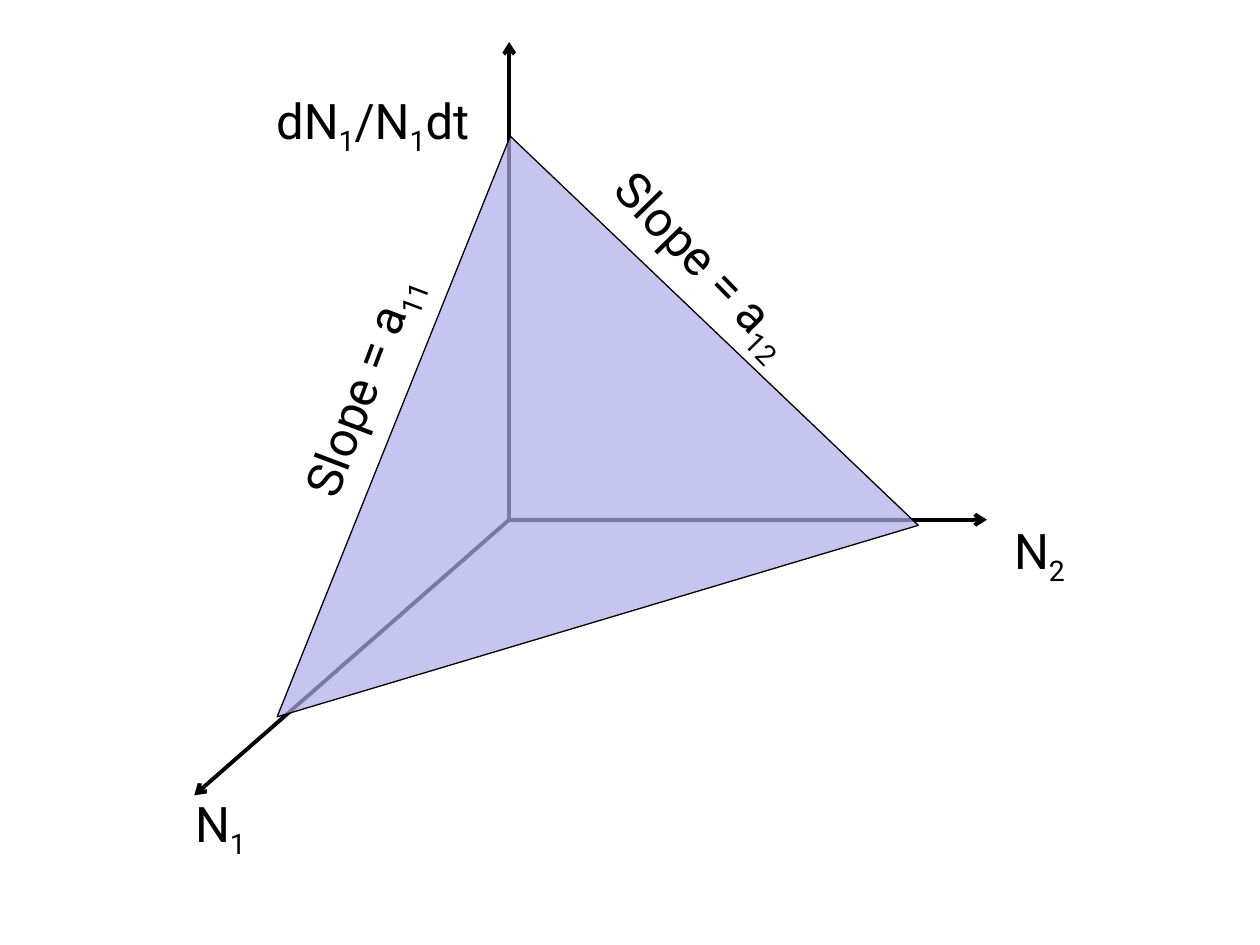
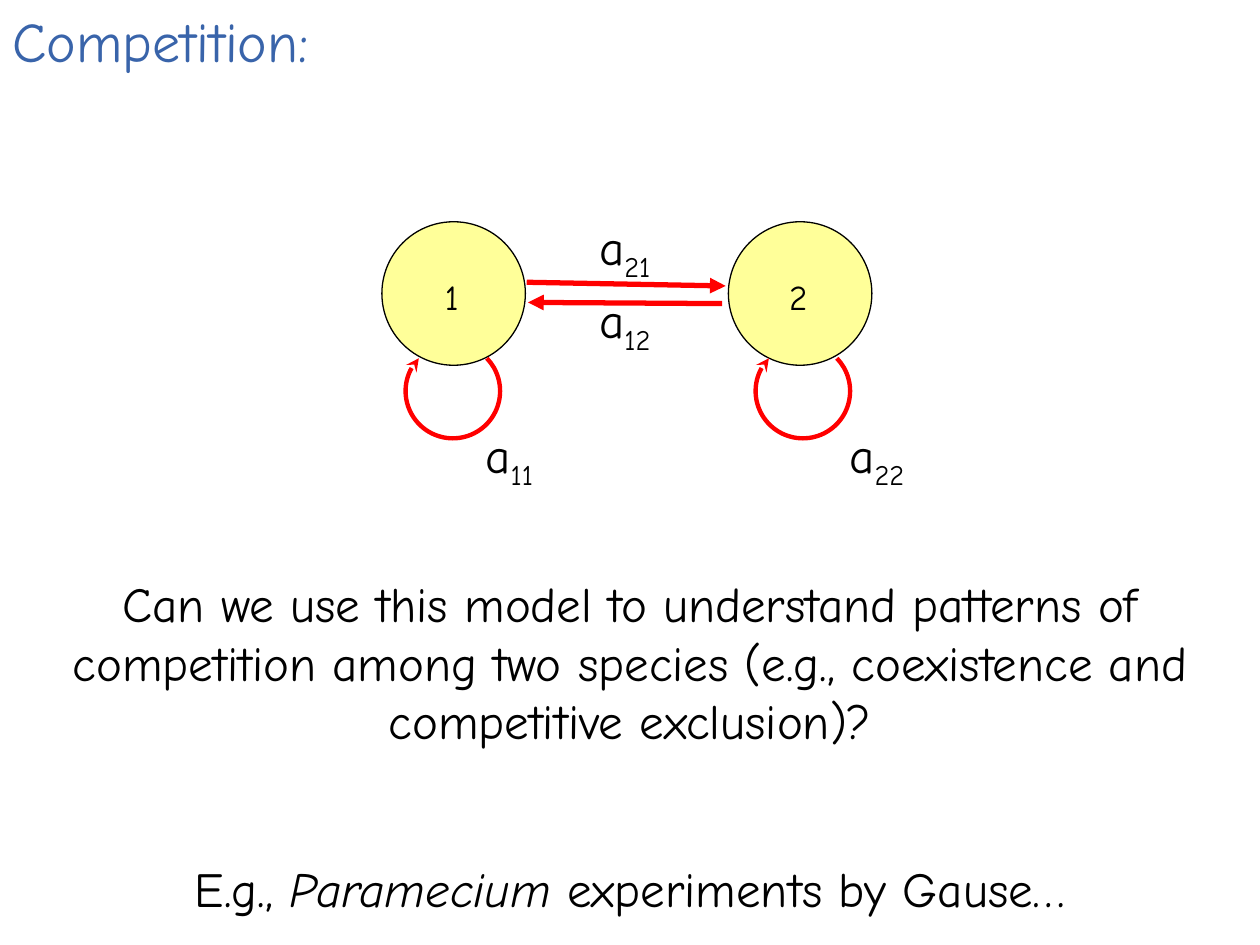
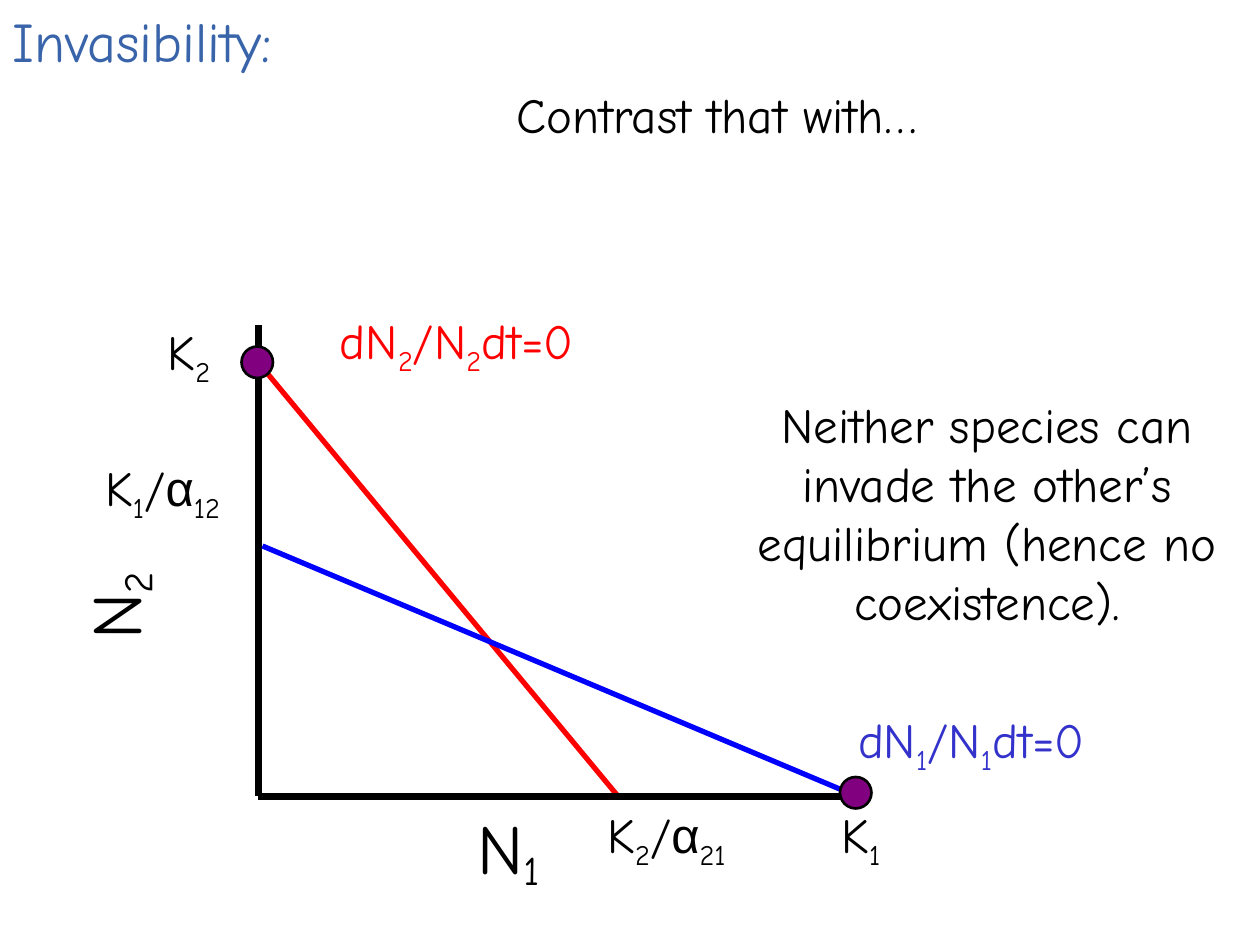
"""Build three slides on the competition model of two species."""
from itertools import groupby

from lxml.etree import SubElement
from pptx import Presentation
from pptx.dml.color import RGBColor
from pptx.enum.shapes import MSO_CONNECTOR, MSO_SHAPE
from pptx.enum.text import MSO_AUTO_SIZE, PP_ALIGN
from pptx.oxml.ns import qn
from pptx.util import Pt

HUES = {"black": "000000", "title": "3964AA", "plane": "ADADEB",
        "red": "FF0000", "blue": "0000FF", "label": "3333CC",
        "yellow": "FFFF99", "purple": "800080"}
HAND, SANS, GREEK = "Comic Neue", "Roboto", "Arial"
LEFT, MID = PP_ALIGN.LEFT, PP_ALIGN.CENTER
TITLE = {"size": 32, "hue": "title", "align": LEFT}
AXIS = {"size": 40, "align": LEFT, "sub": -16, "lead": 1.15}

# Text marks: |subscript|, *italic*, and a line break between paragraphs.
ORIGIN = (291, 297)
TIPS = [(111, 454.5), (291, 24), (564, 297)]
PLANE = [(158.4, 409.6), (291.6, 77.8), (524.8, 300.2)]
SPACE = [
    ("N|2|", (558, 294, 72, 41), {}),
    ("N|1|", (90, 450, 72, 41), {}),
    ("dN|1|/N|1|dt", (126, 48, 174, 41), {}),
    ("Slope = a|12|", (289.5, 129.5, 228, 41), {"turn": 45.7}),
    ("Slope = a|11|", (91.5, 199.5, 228, 41), {"turn": 290.7}),
]

NODES = [("1", 218.2, 231.8), ("2", 416.2, 431.8)]
LINKS = [((412.6, 173.5), (301.7, 172.8)), ((301, 161.3), (414.7, 163.4))]
MODEL = [
    ("a|12|", (330, 162, 54, 41), {}),
    ("a|21|", (330, 120, 54, 41), {}),
    ("a|11|", (264, 239, 54, 41), {}),
    ("a|22|", (474, 239, 54, 41), {}),
    ("Can we use this model to understand patterns of competition among "
     "two species (e.g., coexistence and competitive exclusion)?\n"
     "E.g., *Paramecium* experiments by Gause…",
     (24, 324, 672, 209), {"gap": 62}),
    ("Competition:", (0, 0, 234, 45), TITLE),
]

LINES = [
    ((150, 210), (354, 456), "red", 3),
    ((147.6, 185.8), (147.6, 455), "black", 4),
    ((147.6, 455), (489.6, 455), "black", 4),
    ((150, 312), (492, 456), "blue", 3),
]
DOTS = [(138, 198), (480, 444)]
GRAPH = [
    ("N|1|", (265.7, 448.6, 58, 63), AXIS),
    ("N|2|", (29.5, 309.6, 63, 63), AXIS | {"turn": 270}),
    ("Invasibility:", (0, 0, 234, 45), TITLE),
    ("K|1|/α|12|", (30, 258, 126, 41), {}),
    ("Contrast that with…", (288, 45, 414, 41), {"align": LEFT}),
    ("dN|1|/N|1|dt=0", (456, 402, 198, 41), {"hue": "label"}),
    ("K|1|", (462, 456, 60, 41), {}),
    ("dN|2|/N|2|dt=0", (162, 174, 198, 41), {"hue": "red"}),
    ("Neither species can invade the other’s equilibrium "
     "(hence no coexistence).", (408, 222, 312, 142), {}),
    ("K|2|/α|21|", (318, 456, 126, 41), {}),
    ("K|2|", (78, 180, 60, 41), {}),
]


def rgb(hue):
    return RGBColor.from_string(HUES[hue])


def pts(*nums):
    return [Pt(num) for num in nums]


def bits(text):
    for i, chunk in enumerate(text.split("*")):
        for j, piece in enumerate(chunk.split("|")):
            for greek, marks in groupby(piece, lambda mark: mark == "α"):
                yield "".join(marks), i % 2, j % 2, greek


def write(slide, text, box, font=HAND, size=28, hue="black", align=MID,
          sub=-25, lead=None, gap=0, turn=0):
    shape = slide.shapes.add_textbox(*pts(*box))
    shape.rotation = turn
    frame = shape.text_frame
    frame.word_wrap = True
    frame.auto_size = MSO_AUTO_SIZE.SHAPE_TO_FIT_TEXT
    for row, line in enumerate(text.split("\n")):
        para = frame.add_paragraph() if row else frame.paragraphs[0]
        form = {"alignment": align, "line_spacing": lead,
                "space_before": Pt(gap if row else 0)}
        for key, val in form.items():
            setattr(para, key, val)
        for words, slant, low, greek in bits(line):
            run = para.add_run()
            run.text = words
            form = {"name": GREEK if greek else font, "size": Pt(size),
                    "italic": bool(slant)}
            for key, val in form.items():
                setattr(run.font, key, val)
            run.font.color.rgb = rgb(hue)
            if low:
                run.font._element.set("baseline", str(sub * 1000))


def label(slide, items, **form):
    for text, box, own in items:
        write(slide, text, box, **(form | own))


def stroke(shape, hue, width, head=None):
    shape.line.color.rgb = rgb(hue)
    shape.line.width = Pt(width)
    if head:
        SubElement(shape.line._get_or_add_ln(), qn("a:tailEnd"), type=head)


def paint(shape, fill, hue, width, head=None):
    shape.shadow.inherit = False
    if fill:
        shape.fill.solid()
        shape.fill.fore_color.rgb = rgb(fill)
    else:
        shape.fill.background()
    stroke(shape, hue, width, head)


def join(slide, start, end, hue, width, head=None):
    line = slide.shapes.add_connector(
        MSO_CONNECTOR.STRAIGHT, *pts(*start, *end))
    stroke(line, hue, width, head)
    SubElement(line._element.spPr, qn("a:effectLst"))


def disc(slide, x, y, size, fill, width):
    shape = slide.shapes.add_shape(MSO_SHAPE.OVAL, *pts(x, y, size, size))
    paint(shape, fill, "black", width)


def loop(slide, x, y, size):
    shape = slide.shapes.add_shape(MSO_SHAPE.ARC, *pts(x, y, size, size))
    for i, angle in enumerate((316, 224)):
        shape.adjustments[i] = angle * 0.6
    paint(shape, None, "red", 2.5, "stealth")


def space(slide):
    for tip in TIPS:
        join(slide, ORIGIN, tip, "black", 2.25, "arrow")
    first, *rest = [pts(*spot) for spot in PLANE]
    form = slide.shapes.build_freeform(*first, scale=1.0)
    form.add_line_segments(rest, close=True)
    plane = form.convert_to_shape()
    paint(plane, "plane", "black", 0.75)
    tint = plane._element.spPr.find(qn("a:solidFill"))[0]
    SubElement(tint, qn("a:alpha"), val="70000")
    label(slide, SPACE, font=SANS)


def model(slide):
    for name, x, bend in NODES:
        disc(slide, x, 126.7, 82, "yellow", 0.75)
        write(slide, name, (x - 2, 154, 84, 31), size=20)
        loop(slide, bend, 196.5, 54)
    for start, end in LINKS:
        join(slide, start, end, "red", 3, "triangle")
    label(slide, MODEL)


def graph(slide):
    for line in LINES:
        join(slide, *line)
    label(slide, GRAPH)
    for x, y in DOTS:
        disc(slide, x, y, 18, "purple", 1.5)


def main():
    deck = Presentation()
    deck.slide_width, deck.slide_height = pts(720, 540)
    for draw in (space, model, graph):
        draw(deck.slides.add_slide(deck.slide_layouts[6]))
    deck.save("out.pptx")


if __name__ == "__main__":
    main()
